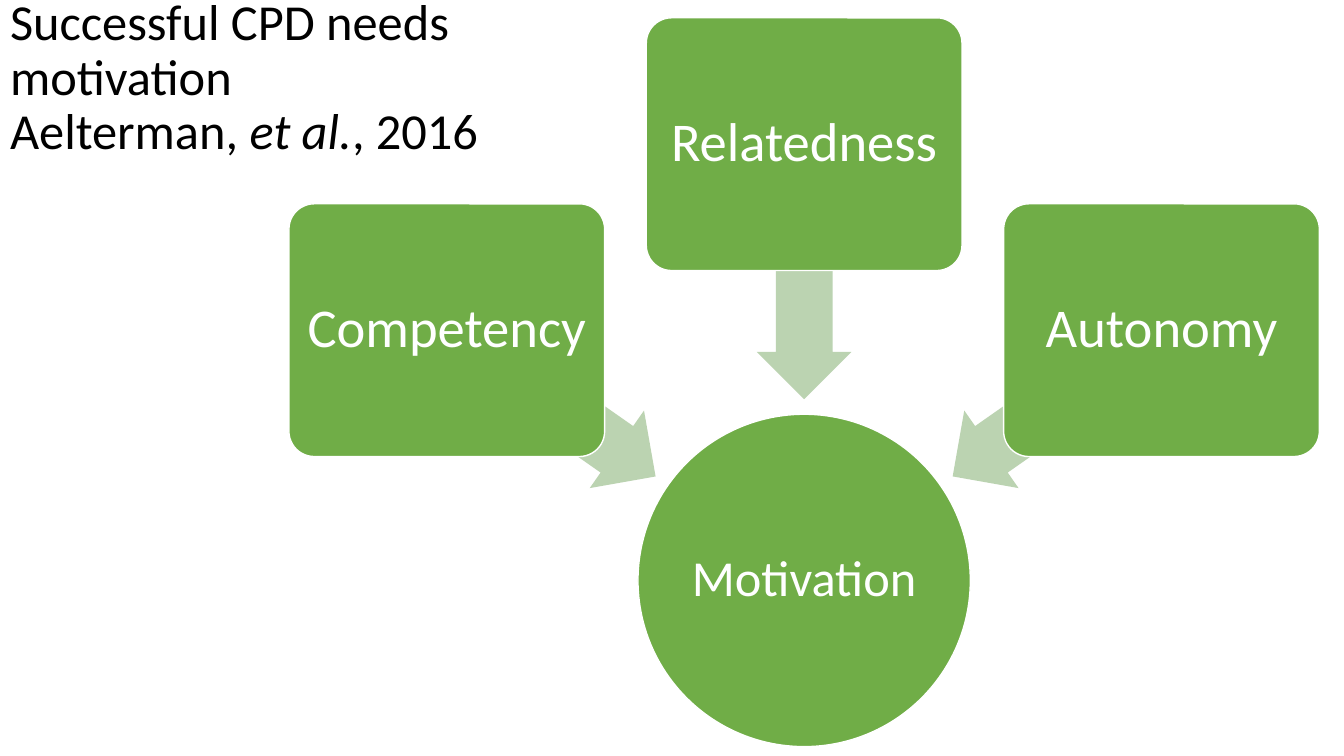
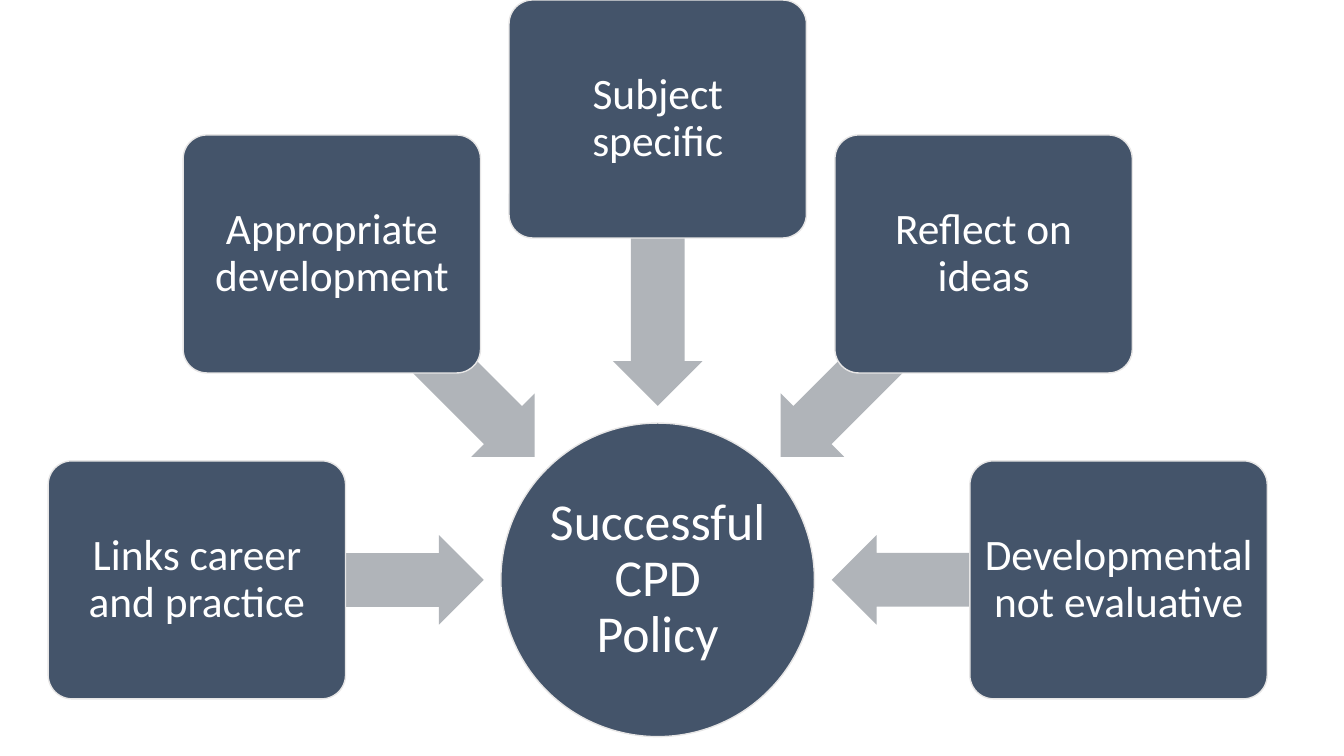
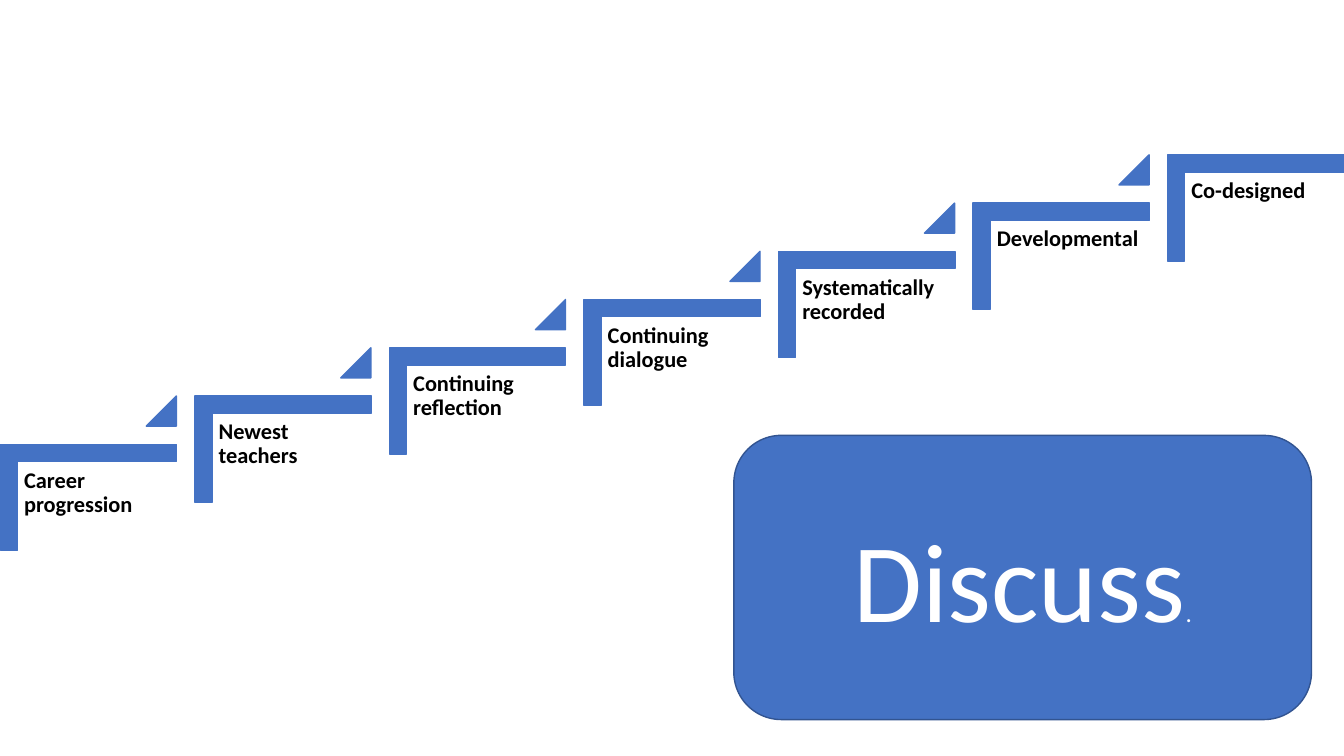
from dataclasses import dataclass
from math import cos, radians, sin
from typing import Optional

from lxml.etree import SubElement
from pptx import Presentation
from pptx.dml.color import RGBColor
from pptx.enum.shapes import MSO_SHAPE
from pptx.enum.text import MSO_ANCHOR, MSO_AUTO_SIZE, PP_ALIGN
from pptx.oxml.ns import qn
from pptx.shapes.autoshape import Shape
from pptx.slide import Slide
from pptx.text.text import TextFrame
from pptx.util import Pt


@dataclass(frozen=True)
class Theme:
    font: str = "Calibri"
    black: RGBColor = RGBColor(0x00, 0x00, 0x00)
    white: RGBColor = RGBColor(0xFF, 0xFF, 0xFF)
    green: RGBColor = RGBColor(0x70, 0xAD, 0x47)
    pale_green: RGBColor = RGBColor(0xBB, 0xD3, 0xB1)
    slate: RGBColor = RGBColor(0x44, 0x54, 0x6A)
    pale_slate: RGBColor = RGBColor(0xB0, 0xB4, 0xB9)
    light_gray: RGBColor = RGBColor(0xE7, 0xE6, 0xE6)
    blue: RGBColor = RGBColor(0x44, 0x72, 0xC4)
    dark_blue: RGBColor = RGBColor(0x32, 0x54, 0x91)
    title_size: float = 36
    step_size: float = 16
    discuss_size: float = 80
    stop_size: float = 18
    line_spacing: float = 0.9


THEME = Theme()


@dataclass(frozen=True)
class Area:
    """A rectangle in points."""
    left: float
    top: float
    width: float
    height: float


def centred(x: float, y: float, width: float, height: float) -> Area:
    return Area(x - width / 2, y - height / 2, width, height)


@dataclass(frozen=True)
class Spoke:
    label: str
    angle: float


@dataclass(frozen=True)
class Radial:
    """A hub with boxes around it, each with an arrow to the hub."""
    hub_label: str
    spokes: tuple[Spoke, ...]
    hub_x: float
    hub_y: float
    hub_size: float
    box_radius: float
    box_width: float
    box_height: float
    arrow_radius: float
    arrow_width: float
    arrow_height: float
    fill: RGBColor
    outline: RGBColor
    arrow_fill: RGBColor
    hub_text_size: float
    box_text_size: float
    box_inset: float


MOTIVATION = Radial(
    hub_label="Motivation",
    spokes=(Spoke("Competency", 215), Spoke("Relatedness", 270), Spoke("Autonomy", 325)),
    hub_x=574.4, hub_y=414.6, hub_size=237.4,
    box_radius=311.6, box_width=225.5, box_height=180.5,
    arrow_radius=220.5, arrow_width=182, arrow_height=67.6,
    fill=THEME.green, outline=THEME.white, arrow_fill=THEME.pale_green,
    hub_text_size=36, box_text_size=39, box_inset=5.5,
)
POLICY = Radial(
    hub_label="Successful CPD Policy",
    spokes=(
        Spoke("Links career and practice", 180),
        Spoke("Appropriate development", 225),
        Spoke("Subject specific", 270),
        Spoke("Reflect on ideas", 315),
        Spoke("Developmental not evaluative", 0),
    ),
    hub_x=469.8, hub_y=414.2, hub_size=224,
    box_radius=329.2, box_width=212.4, box_height=170,
    arrow_radius=226.8, arrow_width=205, arrow_height=64,
    fill=THEME.slate, outline=THEME.light_gray, arrow_fill=THEME.pale_slate,
    hub_text_size=37, box_text_size=31, box_inset=4.5,
)

STEPS = (
    "Career progression", "Newest teachers", "Continuing reflection",
    "Continuing dialogue", "Systematically recorded", "Developmental", "Co-designed",
)
STEP_RUN, STEP_RISE = 138.97, 34.45
STEP_BAR = 12.2


def paint(figure: Shape, fill: RGBColor, outline: Optional[RGBColor] = None) -> None:
    figure.shadow.inherit = False
    figure.fill.solid()
    figure.fill.fore_color.rgb = fill
    if outline is None:
        figure.line.fill.background()
    else:
        figure.line.color.rgb = outline
        figure.line.width = Pt(1)


def add_figure(page: Slide, kind: MSO_SHAPE, area: Area, fill: RGBColor,
               outline: Optional[RGBColor] = None, adjust: tuple[float, ...] = (),
               rotation: float = 0) -> Shape:
    figure = page.shapes.add_shape(
        kind, Pt(area.left), Pt(area.top), Pt(area.width), Pt(area.height))
    figure.rotation = rotation
    for index, value in enumerate(adjust):
        figure.adjustments[index] = value
    paint(figure, fill, outline)
    return figure


def add_corner(page: Slide, area: Area, bar: float, color: RGBColor) -> None:
    """An angle of two bars, along the top and the left of the area."""
    left, top = area.left, area.top
    right, bottom = left + area.width, top + area.height
    points = ((right, top), (right, top + bar), (left + bar, top + bar),
              (left + bar, bottom), (left, bottom))
    builder = page.shapes.build_freeform(Pt(left), Pt(top))
    builder.add_line_segments([(Pt(x), Pt(y)) for x, y in points], close=True)
    paint(builder.convert_to_shape(), color, color)


def set_insets(frame: TextFrame, inset: float) -> None:
    frame.margin_left = frame.margin_right = Pt(inset)
    frame.margin_top = frame.margin_bottom = Pt(inset)


def format_text(frame: TextFrame, size: float, color: RGBColor, align: PP_ALIGN,
                anchor: MSO_ANCHOR, bold: bool = False,
                spacing: float = THEME.line_spacing) -> None:
    frame.word_wrap = True
    frame.auto_size = MSO_AUTO_SIZE.NONE
    frame.vertical_anchor = anchor
    for para in frame.paragraphs:
        para.alignment = align
        para.line_spacing = spacing
        for span in para.runs:
            span.font.name = THEME.font
            span.font.size = Pt(size)
            span.font.bold = bold
            span.font.color.rgb = color


def label_figure(figure: Shape, label: str, size: float, inset: float) -> None:
    frame = figure.text_frame
    frame.text = label
    set_insets(frame, inset)
    format_text(frame, size, THEME.white, PP_ALIGN.CENTER, MSO_ANCHOR.MIDDLE)


def add_radial(page: Slide, radial: Radial) -> None:
    hub = add_figure(
        page, MSO_SHAPE.OVAL,
        centred(radial.hub_x, radial.hub_y, radial.hub_size, radial.hub_size),
        radial.fill, radial.outline)
    label_figure(hub, radial.hub_label, radial.hub_text_size, 2)
    for spoke in radial.spokes:
        across, down = cos(radians(spoke.angle)), sin(radians(spoke.angle))
        add_figure(
            page, MSO_SHAPE.LEFT_ARROW,
            centred(radial.hub_x + radial.arrow_radius * across,
                    radial.hub_y + radial.arrow_radius * down,
                    radial.arrow_width, radial.arrow_height),
            radial.arrow_fill, adjust=(0.6, 0.5), rotation=spoke.angle)
        box = add_figure(
            page, MSO_SHAPE.ROUNDED_RECTANGLE,
            centred(radial.hub_x + radial.box_radius * across,
                    radial.hub_y + radial.box_radius * down,
                    radial.box_width, radial.box_height),
            radial.fill, radial.outline, adjust=(0.1,))
        label_figure(box, spoke.label, radial.box_text_size, radial.box_inset)


def set_title(page: Slide) -> None:
    title = page.shapes.title
    title.left, title.top, title.width, title.height = Pt(0), Pt(4.3), Pt(386.6), Pt(104.4)
    para = title.text_frame.paragraphs[0]
    para.text = "Successful CPD needs motivation\vAelterman, "
    for words, italic in (("et al.", True), (", 2016", False)):
        span = para.add_run()
        span.text = words
        span.font.italic = italic
    format_text(title.text_frame, THEME.title_size, THEME.black,
                PP_ALIGN.LEFT, MSO_ANCHOR.MIDDLE)
    # The line break takes the title size too
    for line_break in para._p.findall(qn("a:br")):
        SubElement(line_break, qn("a:rPr")).set("sz", str(int(THEME.title_size * 100)))


def add_staircase(page: Slide) -> None:
    for index, label in enumerate(STEPS):
        x, y = index * STEP_RUN, -index * STEP_RISE
        add_corner(page, centred(x + 63.2, y + 355.3, 126, 75.8), STEP_BAR, THEME.blue)
        box = page.shapes.add_textbox(Pt(x + 12.4), Pt(y + 330), Pt(113.8), Pt(99.4))
        box.text_frame.text = label
        set_insets(box.text_frame, 4.8)
        format_text(box.text_frame, THEME.step_size, THEME.black,
                    PP_ALIGN.LEFT, MSO_ANCHOR.TOP, bold=True)
        if index < len(STEPS) - 1:
            add_figure(page, MSO_SHAPE.ISOSCELES_TRIANGLE,
                       Area(x + 104.5, y + 282.9, 21.5, 21.5),
                       THEME.blue, THEME.blue, (1,))


def add_discuss(page: Slide) -> None:
    panel = add_figure(page, MSO_SHAPE.ROUNDED_RECTANGLE, Area(524.2, 311, 412.6, 203),
                       THEME.blue, THEME.dark_blue)
    para = panel.text_frame.paragraphs[0]
    para.text = "Discuss"
    stop = para.add_run()
    stop.text = "."
    format_text(panel.text_frame, THEME.discuss_size, THEME.white,
                PP_ALIGN.CENTER, MSO_ANCHOR.MIDDLE, spacing=1.0)
    stop.font.size = Pt(THEME.stop_size)


def main() -> None:
    deck = Presentation()
    deck.slide_width, deck.slide_height = Pt(960), Pt(540)
    title_only, blank = deck.slide_layouts[5], deck.slide_layouts[6]

    # Motivation
    page = deck.slides.add_slide(title_only)
    set_title(page)
    add_radial(page, MOTIVATION)

    # Policy
    add_radial(deck.slides.add_slide(blank), POLICY)

    # Steps and discussion
    page = deck.slides.add_slide(blank)
    add_staircase(page)
    add_discuss(page)

    deck.save("out.pptx")


if __name__ == "__main__":
    main()
